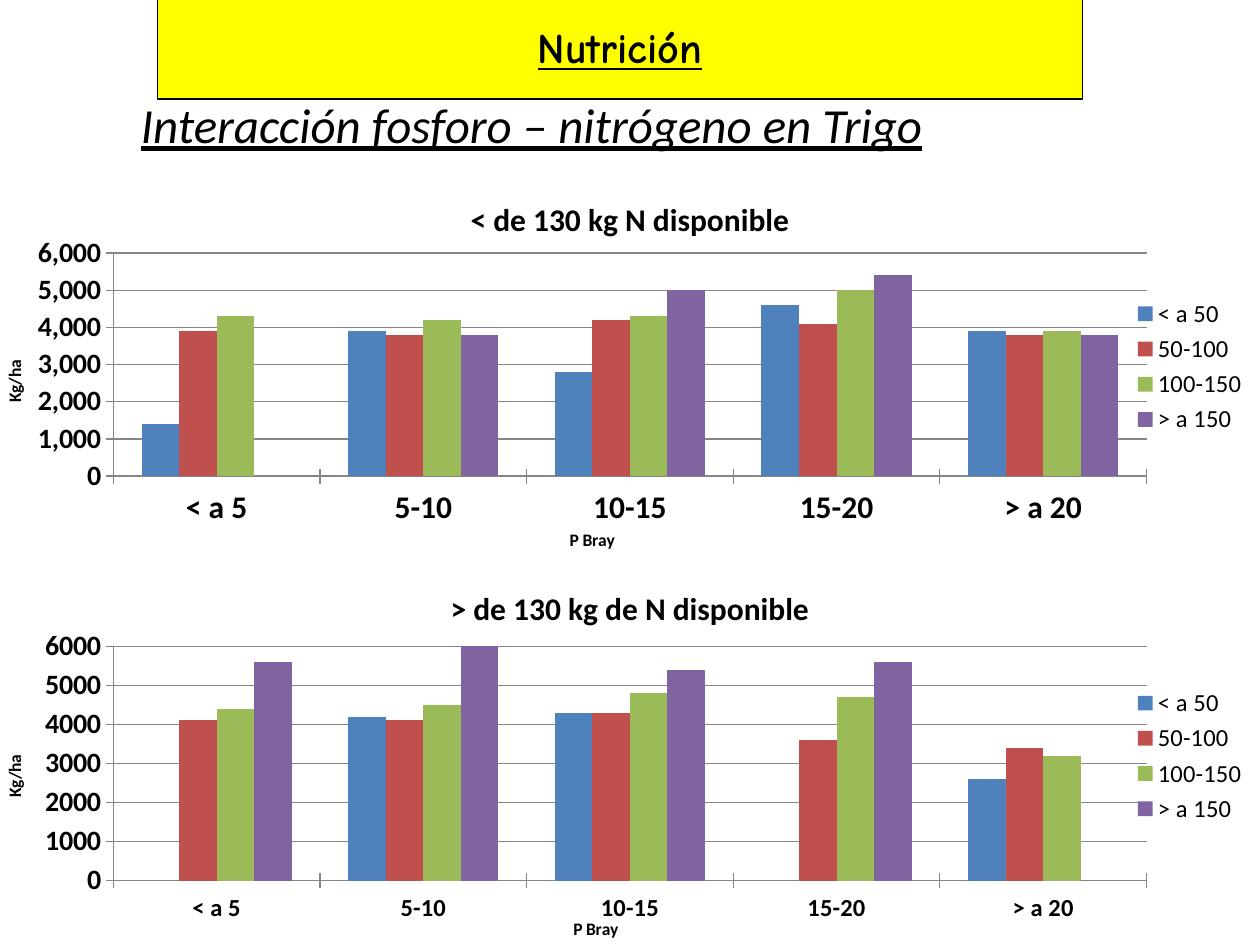
from lxml import etree
from pptx import Presentation
from pptx.chart.data import CategoryChartData
from pptx.dml.color import RGBColor
from pptx.enum.chart import XL_CHART_TYPE, XL_LEGEND_POSITION, XL_TICK_MARK
from pptx.enum.text import MSO_ANCHOR, MSO_AUTO_SIZE, PP_ALIGN
from pptx.oxml.ns import qn
from pptx.util import Inches, Pt

CLUSTERED = XL_CHART_TYPE.COLUMN_CLUSTERED
RIGHT = XL_LEGEND_POSITION.RIGHT
CROSS = XL_TICK_MARK.CROSS
MIDDLE = MSO_ANCHOR.MIDDLE
GROW = MSO_AUTO_SIZE.SHAPE_TO_FIT_TEXT
CENTER = PP_ALIGN.CENTER
LEFT = PP_ALIGN.LEFT

COLORS = {"text": "000000", "banner": "FFFF00", "axis": "868686"}
SERIES_COLORS = {
    "< a 50": "4F81BD",
    "50-100": "C0504D",
    "100-150": "9BBB59",
    "> a 150": "8064A2",
}
PHOSPHORUS_LEVELS = ["< a 5", "5-10", "10-15", "15-20", "> a 20"]
LOW_NITROGEN = [
    [1400, 3900, 2800, 4600, 3900],
    [3900, 3800, 4200, 4100, 3800],
    [4300, 4200, 4300, 5000, 3900],
    [None, 3800, 5000, 5400, 3800],
]
HIGH_NITROGEN = [
    [None, 4200, 4300, None, 2600],
    [4100, 4100, 4300, 3600, 3400],
    [4400, 4500, 4800, 4700, 3200],
    [5600, 6100, 5400, 5600, None],
]


def rgb(name):
    return RGBColor.from_string(COLORS[name])


def set_inner_plot(plot, bounds):
    """Fix the plot area, without its labels, as fractions of the chart."""
    plot_area = plot._element.getparent()
    layout = plot_area.find(qn("c:layout"))
    if layout is None:
        layout = etree.Element(qn("c:layout"))
        plot_area.insert(0, layout)
    manual = etree.SubElement(layout, qn("c:manualLayout"))
    settings = [("layoutTarget", "inner"), ("xMode", "edge"), ("yMode", "edge")]
    settings += zip("xywh", bounds)
    for tag, value in settings:
        etree.SubElement(manual, qn("c:" + tag)).set("val", str(value))


class NutritionSlide:
    font_name = "Calibri"

    def __init__(self, presentation):
        self.slide = presentation.slides.add_slide(presentation.slide_layouts[5])

    def style_font(self, font, size, bold=False, name=None):
        font.name = name or self.font_name
        font.size = Pt(size)
        font.bold = bold
        font.color.rgb = rgb("text")

    def set_heading(self, shape, text, size, alignment, bold=False, italic=False, name=None):
        frame = shape.text_frame
        frame.word_wrap = True
        frame.auto_size = GROW
        frame.vertical_anchor = MIDDLE
        frame.text = text
        paragraph = frame.paragraphs[0]
        paragraph.alignment = alignment
        self.style_font(paragraph.font, size, bold, name)
        paragraph.font.italic = italic
        paragraph.font.underline = True

    def title(self, text, left, top, width, height):
        banner = self.slide.shapes.title
        banner.left, banner.top = Inches(left), Inches(top)
        banner.width, banner.height = Inches(width), Inches(height)
        banner.fill.solid()
        banner.fill.fore_color.rgb = rgb("banner")
        banner.line.color.rgb = rgb("text")
        banner.line.width = Pt(0.75)
        self.set_heading(banner, text, 24, CENTER, bold=True, name="Comic Neue")

    def subtitle(self, text, left, top, width, height):
        box = self.slide.shapes.add_textbox(
            Inches(left), Inches(top), Inches(width), Inches(height))
        self.set_heading(box, text, 28, LEFT, italic=True)

    def label(self, title, text, size):
        """Fill in the title of a chart or an axis."""
        title.text_frame.text = text
        self.style_font(title.text_frame.paragraphs[0].font, size, bold=True)

    def axis(self, axis, title, size):
        self.label(axis.axis_title, title, 10)
        axis.major_tick_mark = CROSS
        axis.format.line.color.rgb = rgb("axis")
        self.style_font(axis.tick_labels.font, size, bold=True)

    def yield_chart(self, title, top, values, category_size, number_format, bounds):
        data = CategoryChartData()
        data.categories = PHOSPHORUS_LEVELS
        for name, yields in zip(SERIES_COLORS, values):
            data.add_series(name, yields)
        chart = self.slide.shapes.add_chart(
            CLUSTERED, Inches(0), Inches(top), Inches(10), Inches(3), data).chart
        self.style_font(chart.font, 10)
        self.label(chart.chart_title, title, 18)

        self.axis(chart.category_axis, "P Bray", category_size)
        value_axis = chart.value_axis
        self.axis(value_axis, "Kg/ha", 16)
        value_axis.minimum_scale, value_axis.maximum_scale = 0, 6000
        value_axis.major_unit = 1000
        value_axis.major_gridlines.format.line.color.rgb = rgb("axis")
        value_axis.tick_labels.number_format = number_format
        value_axis.tick_labels.number_format_is_linked = False

        chart.has_legend = True
        chart.legend.position = RIGHT
        chart.legend.include_in_layout = False
        self.style_font(chart.legend.font, 14)

        plot = chart.plots[0]
        plot.gap_width = 150
        plot.vary_by_categories = False
        for series in plot.series:
            series.format.fill.solid()
            series.format.fill.fore_color.rgb = RGBColor.from_string(
                SERIES_COLORS[series.name])
        set_inner_plot(plot, bounds)


def main():
    presentation = Presentation()
    presentation.slide_width = Inches(10)
    presentation.slide_height = Inches(7.5)

    slide = NutritionSlide(presentation)
    slide.yield_chart("< de 130 kg N disponible", 1.41, LOW_NITROGEN, 18,
                      "#,##0", (0.09, 0.2, 0.82, 0.59))
    slide.yield_chart("> de 130 kg de N disponible", 4.5, HIGH_NITROGEN, 14,
                      "0", (0.09, 0.21, 0.82, 0.62))
    slide.title("Nutrición", 1.25, 0.12, 7.34, 0.5)
    slide.subtitle("Interacción fosforo – nitrógeno en Trigo", 1.02, 0.7, 6.95, 0.57)
    presentation.save("out.pptx")


if __name__ == "__main__":
    main()
